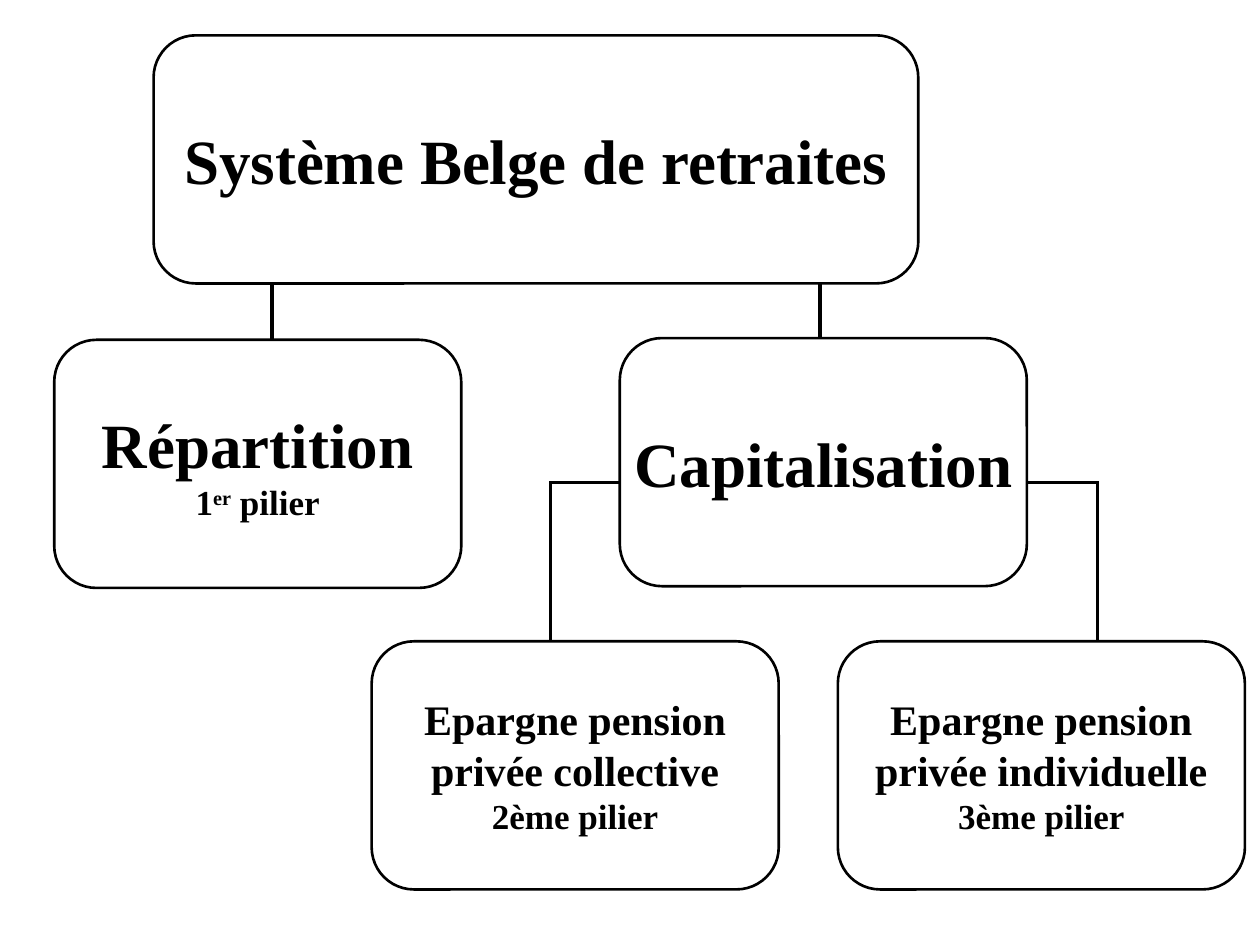
from lxml import etree
from pptx import Presentation
from pptx.dml.color import RGBColor
from pptx.enum.shapes import MSO_CONNECTOR, MSO_SHAPE
from pptx.enum.text import MSO_ANCHOR, PP_ALIGN
from pptx.oxml.ns import qn
from pptx.util import Pt

ROUND = MSO_SHAPE.ROUNDED_RECTANGLE
LINE = MSO_CONNECTOR.STRAIGHT
MIDDLE = MSO_ANCHOR.MIDDLE
CENTER = PP_ALIGN.CENTER

THEME = {
    "font": "Times New Roman",
    "ink": RGBColor(0, 0, 0),
    "head": 36, "name": 24, "note": 20,
    "edge": 1.5, "link": 2,
}

deck = Presentation()
deck.slide_width, deck.slide_height = Pt(720), Pt(540)
slide = deck.slides.add_slide(deck.slide_layouts[6])

# Boxes: left, top, width, then paragraphs of (size, runs); "^" marks superscript
TALL, WIDE, SMALL = 141.8, 437, 232.6
LOW = 366.5
boxes = [
    (87.8, 20.2, WIDE, [("head", ["Système Belge de retraites"])]),
    (31, 194.2, SMALL, [("head", ["Répartition"]),
                        ("note", ["1", "^er", " pilier"])]),
    (354.2, 193.2, SMALL, [("head", ["Capitalisation"])]),
]
for left, kind, rank in [(478.8, "individuelle", 3), (212.4, "collective", 2)]:
    boxes.append((left, LOW, SMALL, [("name", ["Epargne pension"]),
                                     ("name", [f"privée {kind}"]),
                                     ("note", [f"{rank}ème pilier"])]))

for left, top, width, paras in boxes:
    box = slide.shapes.add_shape(ROUND, Pt(left), Pt(top), Pt(width), Pt(TALL))
    box.shadow.inherit = False
    box.adjustments[0] = 0.17
    box.fill.background()
    box.line.color.rgb = THEME["ink"]
    box.line.width = Pt(THEME["edge"])
    frame = box.text_frame
    frame.word_wrap = False
    frame.vertical_anchor = MIDDLE
    for num, (size, runs) in enumerate(paras):
        para = frame.add_paragraph() if num else frame.paragraphs[0]
        para.alignment = CENTER
        for text in runs:
            run = para.add_run()
            run.text = text.lstrip("^")
            run.font.name = THEME["font"]
            run.font.size = Pt(THEME[size])
            run.font.bold = True
            run.font.color.rgb = THEME["ink"]
            if text.startswith("^"):
                run.font._element.set("baseline", "30000")

# Links: two drops from the top box, then an elbow on each side of Capitalisation
links = [(x, 162, x, 193.7) for x in (155.5, 468.7)]
for x, side in [(314.6, 353.5), (627.1, 586.1)]:
    links += [(x, 275, x, LOW), (x, 275.8, side, 275.8)]

for x1, y1, x2, y2 in links:
    link = slide.shapes.add_connector(LINE, Pt(x1), Pt(y1), Pt(x2), Pt(y2))
    link.line.color.rgb = THEME["ink"]
    link.line.width = Pt(THEME["link"])
    etree.SubElement(link._element.spPr, qn("a:effectLst"))

deck.save("out.pptx")
